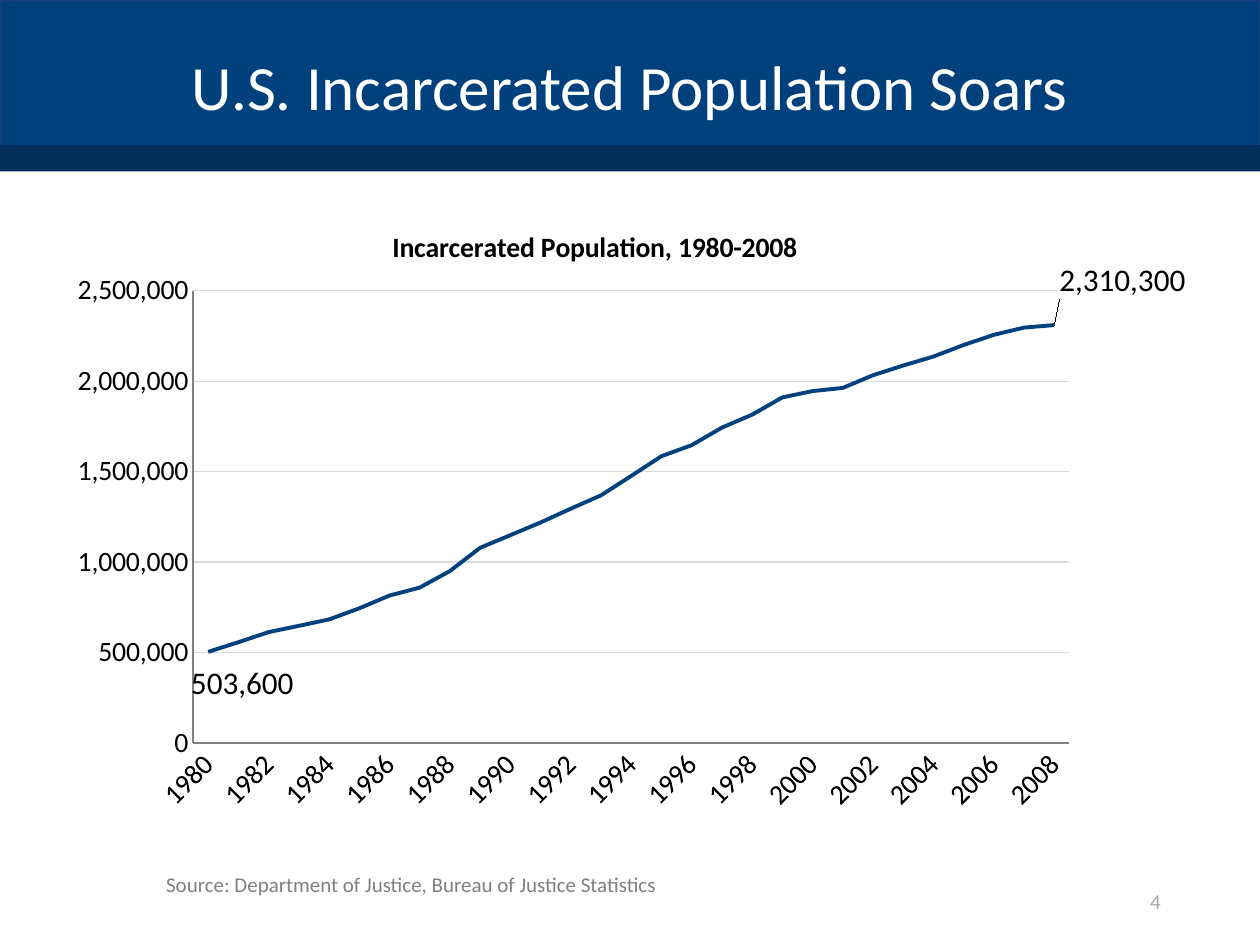
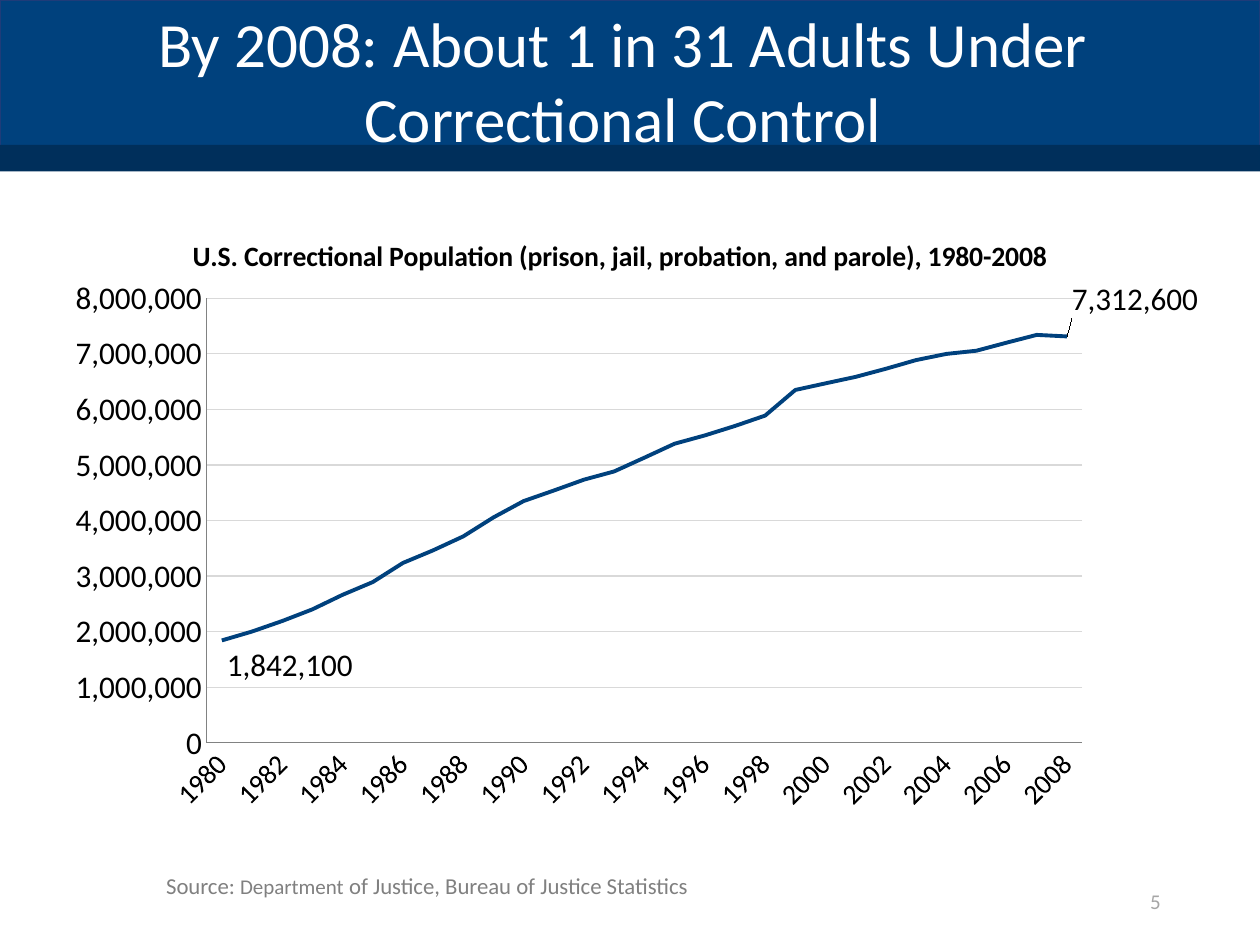
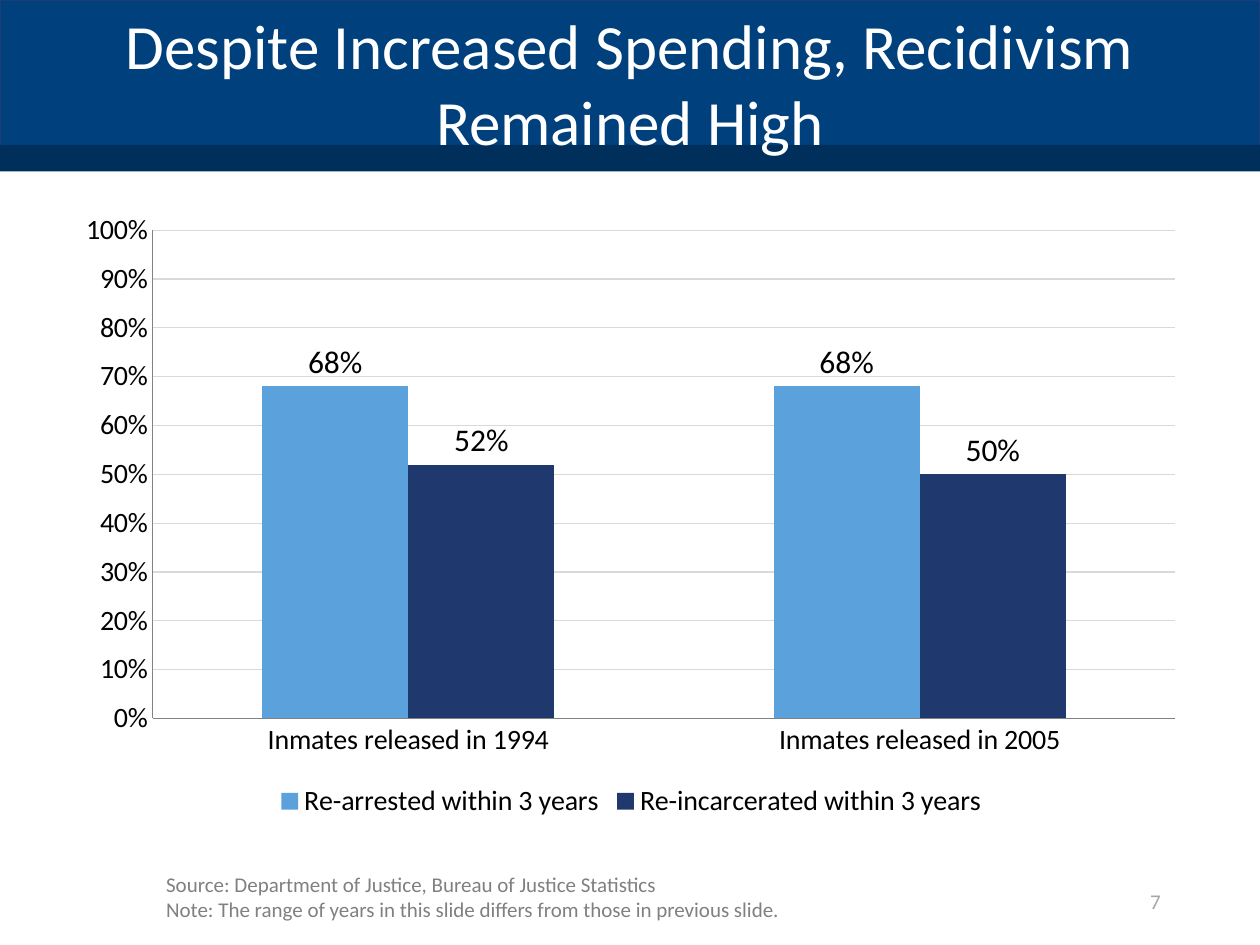
from dataclasses import dataclass
from typing import Optional

from lxml.etree import SubElement
from pptx import Presentation
from pptx.chart.data import CategoryChartData as ChartData
from pptx.dml.color import RGBColor
from pptx.enum.chart import XL_CHART_TYPE as Kind
from pptx.enum.chart import XL_LABEL_POSITION as Spot
from pptx.enum.chart import XL_LEGEND_POSITION as Side
from pptx.enum.chart import XL_TICK_MARK as Tick
from pptx.enum.shapes import MSO_SHAPE as Form
from pptx.enum.text import MSO_ANCHOR as Anchor
from pptx.enum.text import MSO_AUTO_SIZE as Fit
from pptx.enum.text import PP_ALIGN as Align
from pptx.oxml.ns import qn
from pptx.util import Inches, Pt

FONT = "Calibri"
BLUE = RGBColor(0x00, 0x41, 0x7D)
NAVY = RGBColor(0x00, 0x2F, 0x5B)
EDGE = RGBColor(0x1F, 0x3C, 0x79)
SKY = RGBColor(0x5B, 0xA1, 0xDC)
INK = RGBColor(0x1F, 0x38, 0x6E)
WHITE = RGBColor(0xFF, 0xFF, 0xFF)
BLACK = RGBColor(0x00, 0x00, 0x00)
GREY = RGBColor(0x80, 0x80, 0x80)
PALE = RGBColor(0xA6, 0xA6, 0xA6)
AXIS = RGBColor(0x81, 0x82, 0x82)
GRID = RGBColor(0xD9, 0xD9, 0xD9)

SOURCE = "Source: Department of Justice, Bureau of Justice Statistics"
YEARS = [str(year) for year in range(1980, 2009)]


@dataclass
class Box:
    left: float
    top: float
    width: float
    height: float

    def inches(self) -> tuple:
        return tuple(map(Inches, (self.left, self.top, self.width, self.height)))


@dataclass
class Band:
    box: Box
    fill: RGBColor
    line: Optional[RGBColor] = None


@dataclass
class Run:
    text: str
    size: float
    color: RGBColor = GREY


@dataclass
class Frame:
    """What every slide carries around its chart."""
    number: int
    title: str
    top: float
    notes: list
    note_box: Box
    wrap: bool = False


@dataclass
class Graph:
    """A chart's place; plot is its inner area in parts of the chart."""
    box: Box
    plot: Box
    top: float
    step: float
    code: str
    size: float = 16


@dataclass
class Trend:
    """A line over the years; shifts move the labels of the end points."""
    title: str
    title_at: tuple
    values: list
    shifts: dict


BANDS = [
    Band(Box(0, 0, 10, 1.35), BLUE, EDGE),
    Band(Box(0, 1.15, 10, 0.21), NAVY),
]

PRISON = Trend(
    "Incarcerated Population, 1980-2008", (0.29, 0.05),
    [503600, 556800, 612500, 647400, 682800, 744200, 815000, 858700, 950400,
     1078900, 1148700, 1219000, 1295200, 1369200, 1476600, 1585600, 1646300,
     1743600, 1815200, 1910400, 1945400, 1962800, 2033100, 2086500, 2136600,
     2200400, 2256600, 2296400, 2310300],
    {0: (-0.02, 0.05), 28: (0, -0.07)})

CONTROL = Trend(
    "U.S. Correctional Population (prison, jail, probation, and parole), "
    "1980-2008", (0.11, 0.05),
    [1842100, 2002600, 2191700, 2401400, 2662500, 2891800, 3236100, 3462900,
     3714800, 4056200, 4350300, 4540100, 4735600, 4884100, 5131000, 5382100,
     5531200, 5701100, 5888100, 6349000, 6467800, 6584900, 6730900, 6886800,
     6997000, 7055600, 7199700, 7339600, 7312600],
    {0: (0, 0.04), 28: (0, -0.06)})

RETURNS = [
    ("Re-arrested within 3 years", [0.68, 0.68], SKY),
    ("Re-incarcerated within 3 years", [0.52, 0.5], INK),
]


def style(font, size: float, color: RGBColor = BLACK, bold: bool = False) -> None:
    font.name, font.size, font.bold = FONT, Pt(size), bold
    font.color.rgb = color


def stroke(line, color: RGBColor, width: float = 0.75) -> None:
    line.color.rgb = color
    line.width = Pt(width)


def write(para, runs: list) -> None:
    for item in runs:
        run = para.add_run()
        run.text = item.text
        style(run.font, item.size, item.color)


def add_bands(deck, layout) -> None:
    """Put the bands behind the layout's own shapes."""
    draft = deck.slides[0]
    for index, band in enumerate(BANDS):
        shape = draft.shapes.add_shape(Form.RECTANGLE, *band.box.inches())
        shape.shadow.inherit = False
        shape.fill.solid()
        shape.fill.fore_color.rgb = band.fill
        if band.line:
            stroke(shape.line, band.line)
        else:
            shape.line.fill.background()
        layout.shapes._spTree.insert(2 + index, shape._element)


def add_frame(deck, layout, frame: Frame):
    slide = deck.slides.add_slide(layout)
    title = slide.shapes.title
    box = Box(0, frame.top, 10, 1.35)
    title.left, title.top, title.width, title.height = box.inches()
    text = title.text_frame
    text.auto_size = Fit.NONE
    text.vertical_anchor = Anchor.MIDDLE
    para = text.paragraphs[0]
    para.alignment = Align.CENTER
    for index, part in enumerate(frame.title.split("\n")):
        if index:
            para.add_line_break()
        write(para, [Run(part, 36, WHITE)])

    text = slide.shapes.add_textbox(*frame.note_box.inches()).text_frame
    text.word_wrap = frame.wrap
    text.auto_size = Fit.SHAPE_TO_FIT_TEXT
    for index, runs in enumerate(frame.notes):
        write(text.add_paragraph() if index else text.paragraphs[0], runs)

    text = slide.shapes.add_textbox(*Box(7.06, 6.95, 2.25, 0.4).inches()).text_frame
    text.word_wrap = True
    text.vertical_anchor = Anchor.MIDDLE
    text.paragraphs[0].alignment = Align.RIGHT
    write(text.paragraphs[0], [Run(str(frame.number), 12, PALE)])
    return slide


def place(parent, index: int, modes: dict, **spans: float) -> None:
    """Give a chart part a manual layout."""
    for old in parent.findall(qn("c:layout")):
        parent.remove(old)
    layout = SubElement(parent, qn("c:layout"))
    parent.insert(index, layout)
    manual = SubElement(layout, qn("c:manualLayout"))
    for name, value in {**modes, **spans}.items():
        SubElement(manual, qn(f"c:{name}")).set("val", str(value))


def add_graph(slide, graph: Graph, kind, names: list, series: list):
    data = ChartData(number_format=graph.code)
    data.categories = names
    for name, values, _ in series:
        data.add_series(name, values)
    chart = slide.shapes.add_chart(kind, *graph.box.inches(), data).chart
    style(chart.font, 10)
    chart.has_title = chart.has_legend = False
    chart.plots[0].vary_by_categories = False

    for axis, size in ((chart.category_axis, 16), (chart.value_axis, graph.size)):
        axis.major_tick_mark = axis.minor_tick_mark = Tick.NONE
        style(axis.tick_labels.font, size)
        stroke(axis.format.line, AXIS)
    chart.category_axis.has_major_gridlines = False
    value = chart.value_axis
    value.minimum_scale, value.maximum_scale = 0, graph.top
    value.major_unit = graph.step
    value.tick_labels.number_format = graph.code
    value.tick_labels.number_format_is_linked = False
    stroke(value.major_gridlines.format.line, GRID)

    plot = graph.plot
    modes = {"layoutTarget": "inner", "xMode": "edge", "yMode": "edge"}
    place(chart._chartSpace.chart.plotArea, 0, modes,
          x=plot.left, y=plot.top, w=plot.width, h=plot.height)
    return chart


def add_trend(slide, graph: Graph, trend: Trend) -> None:
    chart = add_graph(slide, graph, Kind.LINE, YEARS,
                      [("Series 1", trend.values, BLUE)])
    chart.has_title = True
    run = chart.chart_title.text_frame.paragraphs[0].add_run()
    run.text = trend.title
    style(run.font, 16, bold=True)
    x, y = trend.title_at
    place(chart.chart_title._element, 1, {"xMode": "edge", "yMode": "edge"}, x=x, y=y)

    axis = chart.category_axis._element
    axis.find(qn("c:txPr")).find(qn("a:bodyPr")).set("rot", "-2700000")
    skip = SubElement(axis, qn("c:tickLblSkip"))
    skip.set("val", "2")
    axis.find(qn("c:noMultiLvlLbl")).addprevious(skip)

    line = chart.plots[0].series[0]
    line.smooth = False
    stroke(line.format.line, BLUE, 2.25)
    line.data_labels.show_value = False
    for index, (x, y) in trend.shifts.items():
        label = line.points[index].data_label
        style(label.font, 18)
        label.position = Spot.RIGHT
        place(label._get_or_add_dLbl(), 1, {}, x=x, y=y)


def add_returns(slide, graph: Graph) -> None:
    names = ["Inmates released in 1994", "Inmates released in 2005"]
    chart = add_graph(slide, graph, Kind.COLUMN_CLUSTERED, names, RETURNS)
    plot = chart.plots[0]
    plot.gap_width, plot.overlap = 150, 0
    for bars, (_, _, color) in zip(plot.series, RETURNS):
        bars.format.fill.solid()
        bars.format.fill.fore_color.rgb = color
        labels = bars.data_labels
        labels.show_value = True
        labels.number_format, labels.number_format_is_linked = graph.code, False
        labels.position = Spot.OUTSIDE_END
        style(labels.font, 18)
    chart.has_legend = True
    chart.legend.position = Side.BOTTOM
    chart.legend.include_in_layout = False
    style(chart.legend.font, 16)


def main() -> None:
    deck = Presentation()
    deck.slide_width, deck.slide_height = Inches(10), Inches(7.5)
    layout = deck.slide_layouts[5]

    slide = add_frame(deck, layout, Frame(
        4, "U.S. Incarcerated Population Soars", 0,
        [[Run(SOURCE, 12)]], Box(1.22, 6.87, 4.18, 0.5)))
    add_bands(deck, layout)
    add_trend(slide, Graph(Box(0.52, 1.52, 8.89, 5.02), Box(0.115, 0.157, 0.79, 0.715),
                           2500000, 500000, "#,##0"), PRISON)

    slide = add_frame(deck, layout, Frame(
        5, "By 2008: About 1 in 31 Adults Under \nCorrectional Control ", -0.04,
        [[Run("Source: ", 13), Run("Department", 12),
          Run(" of Justice, Bureau of Justice Statistics", 13)]],
        Box(1.22, 6.87, 4.53, 0.62)))
    area = Box(0.51, 1.59, 9, 4.95)
    add_trend(slide, Graph(area, Box(0.127, 0.157, 0.78, 0.713),
                           8000000, 1000000, "#,##0", 18), CONTROL)

    slide = add_frame(deck, layout, Frame(
        7, "Despite Increased Spending, Recidivism Remained High", -0.02,
        [[Run(SOURCE, 12)],
         [Run("Note: The range of years in this slide differs from those in "
              "previous slide.", 12)]],
        Box(1.22, 6.87, 6.18, 0.6), True))
    add_returns(slide, Graph(area, Box(0.078, 0.048, 0.902, 0.783), 1, 0.1, "0%"))

    deck.save("out.pptx")


if __name__ == "__main__":
    main()
